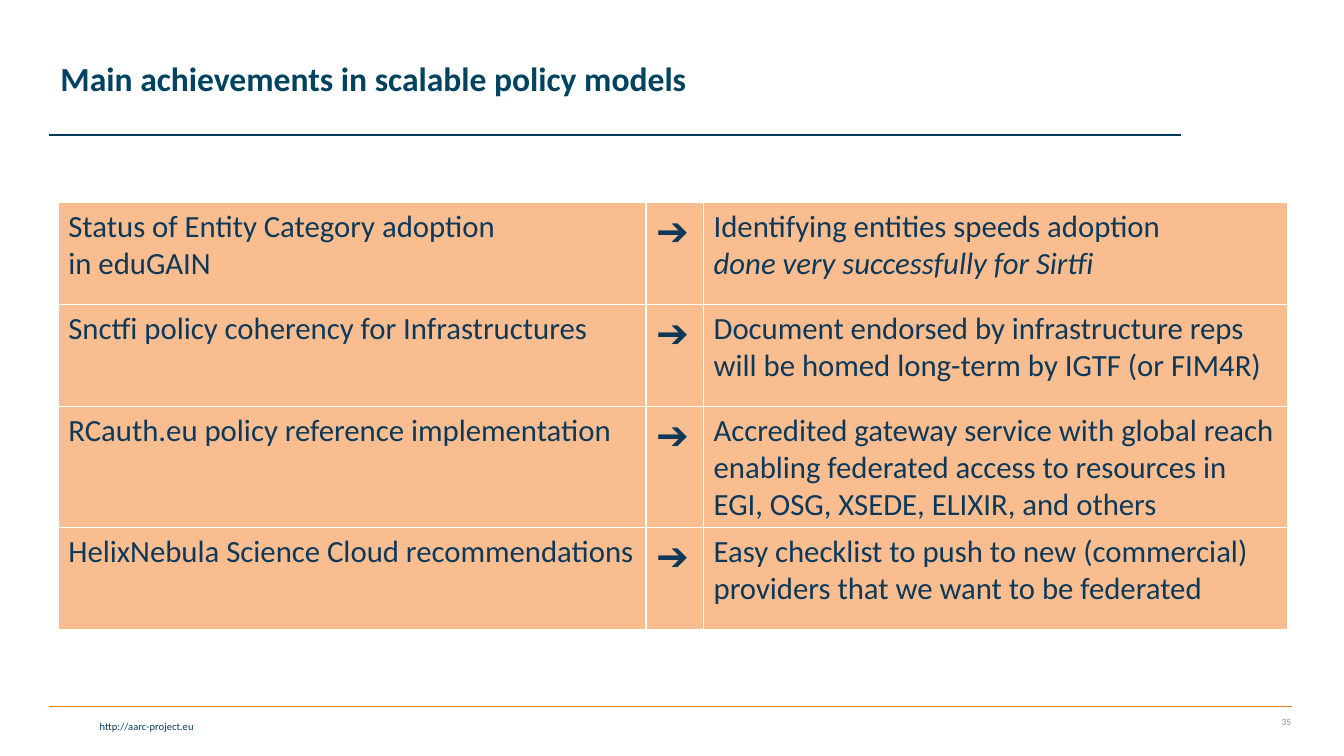
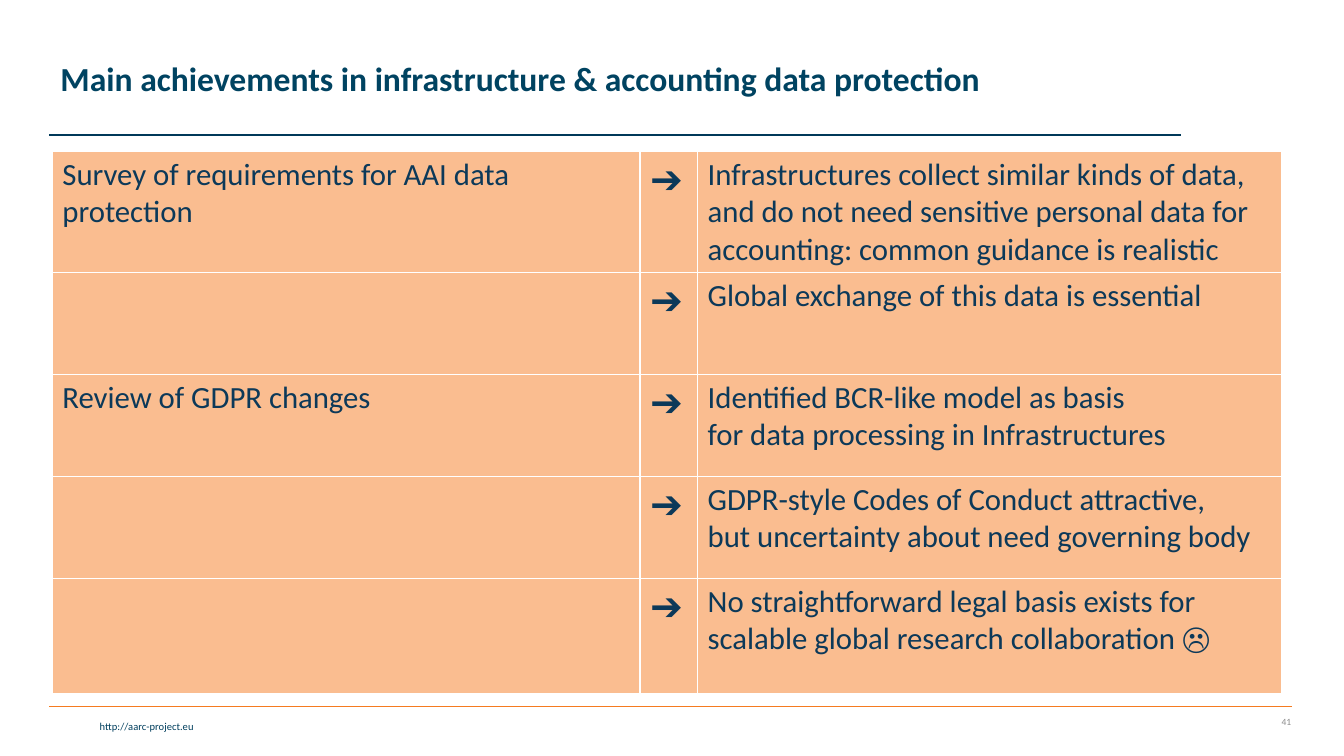
from dataclasses import dataclass

from lxml import etree
from pptx import Presentation
from pptx.dml.color import RGBColor
from pptx.enum import shapes, text
from pptx.oxml import ns
from pptx.util import Cm, Pt


@dataclass(frozen=True)
class Theme:
    font: str = "Calibri"
    title: str = "004361"
    body: str = "0C3959"
    rule: str = "003959"
    accent: str = "F57B20"
    link: str = "003F5E"
    number: str = "8C8C8C"
    cell: str = "FABD90"
    border: str = "FFFFFF"
    title_size: float = 24
    body_size: float = 22
    arrow_size: float = 28
    link_size: float = 7.5
    number_size: float = 6.8


THEME = Theme()
URL = "http://aarc-project.eu"
ARROW = "➔"
COLUMNS = (14.81, 1.45, 14.71)
ROW = 2.57
TITLE_BOX = (1.27, 0.2, 26.7, 3.68)
URL_BOX = (0.08, 18.01, 5.05, 0.58)
NUMBER_BOX = (30.73, 17.81, 2.06, 0.76)
RULES = [  # left, right, height on the page, colour
    (1.24, 32.56, 17.81, THEME.accent),
    (1.24, 29.77, 3.4, THEME.rule),
]

# Each row is (work, result); a result is a list of (text, italic) runs.
SLIDES = [
    dict(
        title="Main achievements in scalable policy models",
        number="35", at=(1.47, 5.11), last_row=ROW,
        rows=[
            ("Status of Entity Category adoption\nin eduGAIN",
             [("Identifying entities speeds adoption\n", False),
              ("done very successfully for Sirtfi", True)]),
            ("Snctfi policy coherency for Infrastructures",
             [("Document endorsed by infrastructure reps\n"
               "will be homed long-term by IGTF (or FIM4R)", False)]),
            ("RCauth.eu policy reference implementation",
             [("Accredited gateway service with global reach\n"
               "enabling federated access to resources in "
               "EGI, OSG, XSEDE, ELIXIR, and others", False)]),
            ("HelixNebula Science Cloud recommendations",
             [("Easy checklist to push to new (commercial) "
               "providers that we want to be federated", False)]),
        ],
    ),
    dict(
        title="Main achievements in infrastructure & accounting data protection",
        number="41", at=(1.32, 3.81), last_row=2.9,
        rows=[
            ("Survey of requirements for AAI data protection",
             [("Infrastructures collect similar kinds of data, "
               "and do not need sensitive personal data for "
               "accounting: common guidance is realistic", False)]),
            ("", [("Global exchange of this data is essential", False)]),
            ("Review of GDPR changes",
             [("Identified BCR-like model as basis\n"
               "for data processing in Infrastructures", False)]),
            ("", [("GDPR-style Codes of Conduct attractive,\n"
                   "but uncertainty about need governing body", False)]),
            ("", [("No straightforward legal basis exists for "
                   "scalable global research collaboration ☹", False)]),
        ],
    ),
]


def rgb(color):
    return RGBColor.from_string(color)


def write(tf, content, size=THEME.body_size, color=THEME.body, bold=False,
          italic=False, align=text.PP_ALIGN.LEFT):
    """Append text to the first paragraph; a newline becomes a line break."""
    p = tf.paragraphs[0]
    p.alignment = align
    for i, line in enumerate(content.split("\n")):
        if i:
            p.add_line_break()
        if line:
            r = p.add_run()
            r.text = line
            r.font.name, r.font.size = THEME.font, Pt(size)
            r.font.bold, r.font.italic = bold, italic
            r.font.color.rgb = rgb(color)
    return p


def place(sp, box):
    sp.left, sp.top, sp.width, sp.height = map(Cm, box)


def add_label(s, content, box, anchor, **style):
    sp = s.shapes.add_textbox(*map(Cm, box))
    sp.text_frame.word_wrap = True
    sp.text_frame.vertical_anchor = anchor
    write(sp.text_frame, content, align=text.PP_ALIGN.RIGHT, **style)
    return sp


def add_rule(s, left, right, y, color):
    line = s.shapes.add_connector(shapes.MSO_CONNECTOR.STRAIGHT,
                                  Cm(left), Cm(y), Cm(right), Cm(y))
    line.line.color.rgb = rgb(color)
    line.line.width = Pt(1)
    sp_pr = line.element.find(ns.qn("p:spPr"))
    etree.SubElement(sp_pr, ns.qn("a:effectLst"))
    return line


def furnish_layout(layout, s):
    """Draw the rules and the address on a slide, then move them to its layout."""
    place(layout.placeholders[0], TITLE_BOX)
    parts = [add_rule(s, *rule) for rule in RULES]
    parts.append(add_label(s, URL, URL_BOX, text.MSO_ANCHOR.TOP,
                           size=THEME.link_size, color=THEME.link))
    for part in parts:
        layout.shapes.element.append(part.element)


def format_cell(cell):
    """Set the borders, then the fill, in the order the file format needs."""
    tc_pr = cell._tc.get_or_add_tcPr()
    for side in ("a:lnL", "a:lnR", "a:lnT", "a:lnB"):
        ln = etree.SubElement(tc_pr, ns.qn(side), w=str(Pt(1)))
        fill = etree.SubElement(ln, ns.qn("a:solidFill"))
        etree.SubElement(fill, ns.qn("a:srgbClr"), val=THEME.border)
    cell.fill.solid()
    cell.fill.fore_color.rgb = rgb(THEME.cell)


def add_achievements(s, rows, at, last_row):
    heights = [ROW] * (len(rows) - 1) + [last_row]
    box = (*at, sum(COLUMNS), sum(heights))
    table = s.shapes.add_table(len(rows), len(COLUMNS), *map(Cm, box)).table
    table.first_row = table.horz_banding = False
    for column, width in zip(table.columns, COLUMNS):
        column.width = Cm(width)
    for row, height, (work, result) in zip(table.rows, heights, rows):
        row.height = Cm(height)
        for cell in row.cells:
            format_cell(cell)
        work_tf, arrow_tf, result_tf = (cell.text_frame for cell in row.cells)
        write(work_tf, work)
        write(arrow_tf, ARROW, size=THEME.arrow_size)
        for content, italic in result:
            write(result_tf, content, italic=italic)


def add_slide(prs, layout, title, number, rows, at, last_row):
    s = prs.slides.add_slide(layout)
    tf = s.shapes.title.text_frame
    tf.auto_size = text.MSO_AUTO_SIZE.NONE
    tf.vertical_anchor = text.MSO_ANCHOR.MIDDLE
    p = write(tf, title, size=THEME.title_size, color=THEME.title, bold=True)
    p.line_spacing = 0.9
    add_label(s, number, NUMBER_BOX, text.MSO_ANCHOR.MIDDLE,
              size=THEME.number_size, color=THEME.number)
    add_achievements(s, rows, at, last_row)
    return s


def main():
    prs = Presentation()
    prs.slide_width, prs.slide_height = Cm(33.87), Cm(19.05)
    layout = prs.slide_layouts.get_by_name("Title Only")
    slides = [add_slide(prs, layout, **content) for content in SLIDES]
    furnish_layout(layout, slides[0])
    prs.save("out.pptx")


if __name__ == "__main__":
    main()
